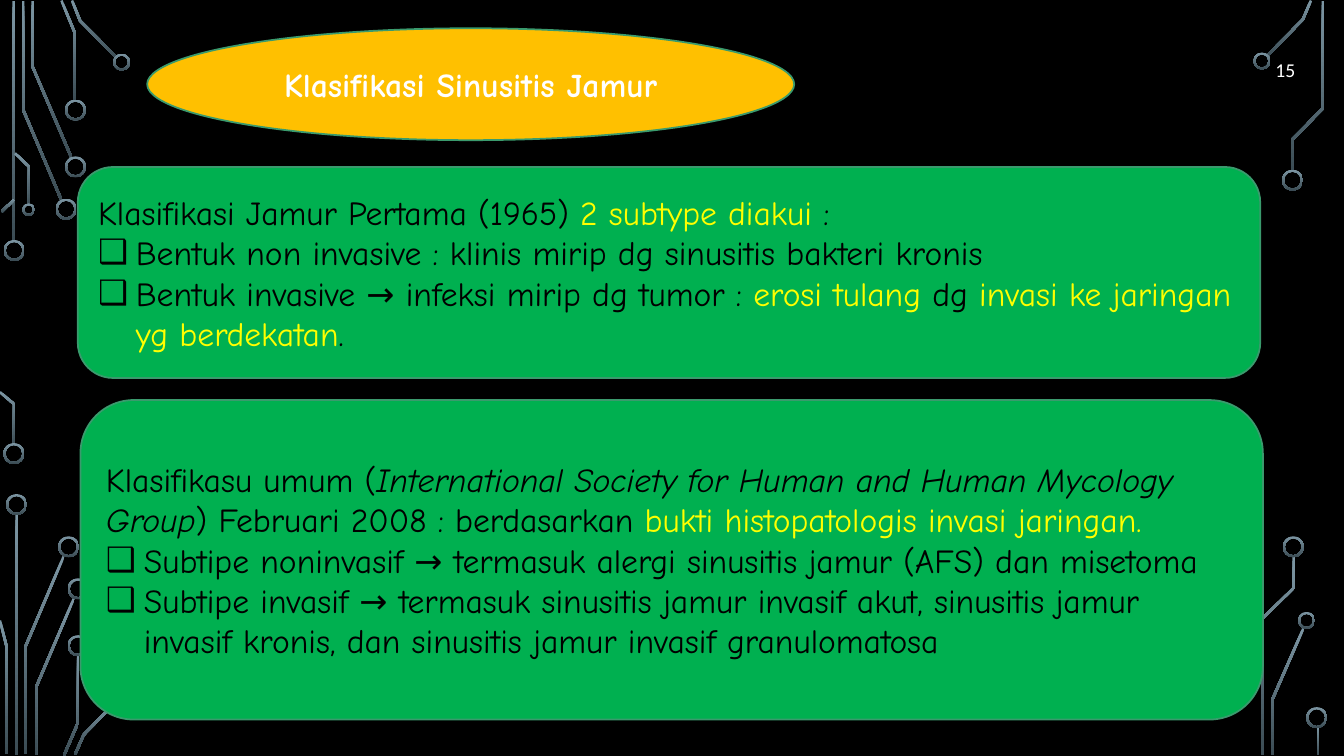
from dataclasses import dataclass

from lxml import etree
from pptx import Presentation
from pptx.dml.color import RGBColor
from pptx.enum.shapes import MSO_SHAPE
from pptx.enum.text import MSO_ANCHOR, MSO_AUTO_SIZE, PP_ALIGN
from pptx.oxml.ns import qn
from pptx.util import Pt

RECT, DONUT = MSO_SHAPE.RECTANGLE, MSO_SHAPE.DONUT
OVAL, ROUNDED = MSO_SHAPE.OVAL, MSO_SHAPE.ROUNDED_RECTANGLE
MIDDLE, NO_FIT = MSO_ANCHOR.MIDDLE, MSO_AUTO_SIZE.NONE
LEFT, CENTER, RIGHT = PP_ALIGN.LEFT, PP_ALIGN.CENTER, PP_ALIGN.RIGHT


@dataclass(frozen=True)
class Theme:
    black: RGBColor = RGBColor(0, 0, 0)
    white: RGBColor = RGBColor(255, 255, 255)
    yellow: RGBColor = RGBColor(255, 255, 0)
    gold: RGBColor = RGBColor.from_string("FFC000")
    green: RGBColor = RGBColor.from_string("00B050")
    edge: RGBColor = RGBColor.from_string("3A9A6D")
    trace_top: RGBColor = RGBColor.from_string("7C96A3")
    trace_end: RGBColor = RGBColor.from_string("3B4C54")
    font: str = "Comic Neue"
    number_font: str = "Calibri"
    text_size: int = 24
    number_size: int = 14


THEME = Theme()
TRACE_WIDTH = 1.8
CORNER = 0.1667
MARGIN = 7.2
BULLET_INDENT = 27

# Circuit decoration: all coordinates are relative to the side's box
LEFT_SIDE = dict(
    bars=[(9.7, 0.7, 172), (11.9, 367.2, 172)],
    traces=[
        [(43.9, 142.9), (16.6, 78.5), (16.6, 0.7)],
        [(51.1, 112.7), (23.4, 47.9), (23.4, 0.7)],
        [(53.6, 72), (53.6, 23.8), (43.9, 0.4)],
        [(83.2, 41), (57.2, 14.8), (51.5, 0.4)],
        [(1.1, 151.2), (10.1, 142.6)],
        [(10.1, 317.5), (10.1, 288.7), (0, 280.1)],
        [(20.9, 146.2), (20.9, 119.2), (10.8, 109.4)],
        [(18.4, 538.6), (18.4, 461.5), (45.7, 397.1)],
        [(4.7, 538.6), (4.7, 461.5), (0, 443.2)],
        [(25.6, 539.3), (25.6, 491.4), (52.9, 427.3)],
        [(45.7, 539.6), (55.8, 516.2), (55.8, 468)],
        [(53.6, 538.9), (59.8, 524.9), (85, 499)],
    ],
    rings={
        15: [(10.1, 178.9), (9.9, 324), (47.2, 149.4), (53.9, 119.2),
             (53.9, 78.6), (11.8, 360.4), (49, 390.6), (55.8, 420.6),
             (55.8, 461.2)],
        12.2: [(86.9, 44.4)],
        9: [(20.5, 149.8)],
    },
)
RIGHT_SIDE = dict(
    bars=[(41.4, 519.1, 20.2)],
    traces=[
        [(5, 40), (30.6, 14), (36.4, 0.4)],
        [(9, 539.3), (9, 499.3), (31, 448.9)],
        [(23, 121.7), (23, 99.7), (45, 77.4), (45, 0.7)],
        [(1.8, 539.3), (1.8, 441.7), (24.1, 420.1), (24.1, 397.4)],
    ],
    rings={
        15: [(23.2, 128.7), (23.8, 390.6), (40.5, 512.6)],
        12.2: [(1.4, 43.6), (33.3, 443.2)],
    },
)

# Each run is its text, then optional format values
YELLOW = dict(color=THEME.yellow)
FIRST_PANEL = [
    (False, [("Klasifikasi Jamur Pertama (1965) ", {}),
             ("2 subtype diakui ", YELLOW), (":", {})]),
    (True, [("Bentuk non invasive : klinis mirip dg sinusitis bakteri kronis", {})]),
    (True, [("Bentuk invasive → infeksi mirip dg tumor : ", {}),
            ("erosi tulang ", YELLOW), ("dg ", {}),
            ("invasi ke jaringan yg berdekatan", YELLOW), (".", {})]),
]
SECOND_PANEL = [
    (False, [("Klasifikasu umum (", {}),
             ("International Society for Human and Human Mycology Group",
              dict(italic=True)),
             (") Februari 2008 : berdasarkan ", {}),
             ("bukti histopatologis invasi jaringan.", YELLOW)]),
    (True, [("Subtipe noninvasif → termasuk alergi sinusitis jamur (AFS) "
             "dan misetoma", {})]),
    (True, [("Subtipe invasif → termasuk sinusitis jamur invasif akut, "
             "sinusitis jamur invasif kronis, dan sinusitis jamur invasif "
             "granulomatosa", {})]),
]


def set_attrs(obj, values):
    for name, value in values.items():
        setattr(obj, name, value)


def add_run(p, text, color=THEME.black, name=THEME.font,
            size=THEME.text_size, bold=False, italic=False):
    r = p.add_run()
    r.text = text
    set_attrs(r.font, dict(name=name, size=Pt(size), bold=bold, italic=italic))
    r.font.color.rgb = color


def set_frame(sp, box, side=MARGIN):
    for name, value in zip(("left", "top", "width", "height"), box):
        setattr(sp, name, Pt(value))
    tf = sp.text_frame
    set_attrs(tf, dict(word_wrap=True, auto_size=NO_FIT, vertical_anchor=MIDDLE,
                       margin_left=Pt(side), margin_right=Pt(side),
                       margin_top=Pt(3.6), margin_bottom=Pt(3.6)))
    return tf


def set_bullet(p, bulleted):
    pPr = p._p.get_or_add_pPr()
    indent = Pt(BULLET_INDENT) if bulleted else 0
    pPr.set("marL", str(indent))
    pPr.set("indent", str(-indent))
    bullet = etree.SubElement(pPr, qn("a:buChar" if bulleted else "a:buNone"))
    if bulleted:
        bullet.set("char", "❑")


def add_backing(slide, shape_type, box, fill):
    sp = slide.shapes.add_shape(shape_type, *map(Pt, box))
    sp.shadow.inherit = False
    sp.fill.solid()
    sp.fill.fore_color.rgb = fill
    sp.line.color.rgb = THEME.edge
    sp.line.width = Pt(1.25)
    return sp


def bring_to_front(sp):
    sp.element.getparent().append(sp.element)


def paint_trace(sp):
    sp.shadow.inherit = False
    sp.line.fill.background()
    sp.fill.gradient()
    sp.fill.gradient_angle = 270
    for stop, color in zip(sp.fill.gradient_stops,
                           (THEME.trace_top, THEME.trace_end)):
        stop.color.rgb = color


def ribbon(points):
    """Outline of a mitred band around a centre line."""
    pts = [complex(*xy) for xy in points]
    normals = [(b - a) / abs(b - a) * 1j for a, b in zip(pts, pts[1:])]
    offsets = []
    for n1, n2 in zip(normals[:1] + normals, normals + normals[-1:]):
        dot = (n1 * n2.conjugate()).real
        offsets.append((n1 + n2) / (1 + dot) * TRACE_WIDTH / 2)
    sides = [[c + sign * o for c, o in zip(pts, offsets)] for sign in (1, -1)]
    return [(Pt(c.real), Pt(c.imag)) for c in sides[0] + sides[1][::-1]]


def add_circuit(slide, box, bars, traces, rings):
    x0, y0 = box[:2]
    shapes = slide.shapes
    for x, y, h in bars:
        paint_trace(shapes.add_shape(RECT, Pt(x0 + x - TRACE_WIDTH / 2),
                                     Pt(y0 + y), Pt(TRACE_WIDTH), Pt(h)))
    for trace in traces:
        outline = ribbon([(x0 + x, y0 + y) for x, y in trace])
        builder = shapes.build_freeform(*outline[0])
        builder.add_line_segments(outline[1:], close=True)
        paint_trace(builder.convert_to_shape())
    for d, centers in rings.items():
        for x, y in centers:
            sp = shapes.add_shape(DONUT, Pt(x0 + x - d / 2), Pt(y0 + y - d / 2),
                                  Pt(d), Pt(d))
            sp.adjustments[0] = 1.44 / d
            paint_trace(sp)


def add_title(slide, box, text):
    add_backing(slide, OVAL, box, THEME.gold)
    sp = slide.shapes.title
    p = set_frame(sp, box).paragraphs[0]
    p.alignment = CENTER
    add_run(p, text, color=THEME.white, bold=True)
    bring_to_front(sp)


def add_panel(slide, box, sp, paragraphs):
    add_backing(slide, ROUNDED, box, THEME.green).adjustments[0] = CORNER
    # Text starts inside the rounded corners
    tf = set_frame(sp, box, MARGIN + 0.29 * CORNER * box[3])
    for i, (bulleted, runs) in enumerate(paragraphs):
        p = tf.add_paragraph() if i else tf.paragraphs[0]
        set_attrs(p, dict(alignment=LEFT, space_before=Pt(0)))
        set_bullet(p, bulleted)
        for text, style in runs:
            add_run(p, text, **style)
    bring_to_front(sp)


def add_number(slide, box, text):
    sp = slide.shapes.add_textbox(*map(Pt, box))
    p = set_frame(sp, box).paragraphs[0]
    p.alignment = RIGHT
    add_run(p, text, color=THEME.white, name=THEME.number_font,
            size=THEME.number_size)


def main():
    prs = Presentation()
    prs.slide_width, prs.slide_height = Pt(960), Pt(540)
    slide = prs.slides.add_slide(prs.slide_layouts[3])
    slide.background.fill.solid()
    slide.background.fill.fore_color.rgb = THEME.black
    first, second = slide.placeholders[1], slide.placeholders[2]

    add_circuit(slide, (0, 0, 94, 540), **LEFT_SIDE)
    add_circuit(slide, (900, 0, 60, 540), **RIGHT_SIDE)
    add_number(slide, (860.4, 22.3, 72, 54.7), "15")
    add_title(slide, (105.1, 20.2, 462.2, 79.9), "Klasifikasi Sinusitis Jamur")
    add_panel(slide, (55.6, 119.3, 844.6, 150.7), first, FIRST_PANEL)
    add_panel(slide, (57.5, 285.8, 844.6, 228.2), second, SECOND_PANEL)
    prs.save("out.pptx")


if __name__ == "__main__":
    main()
